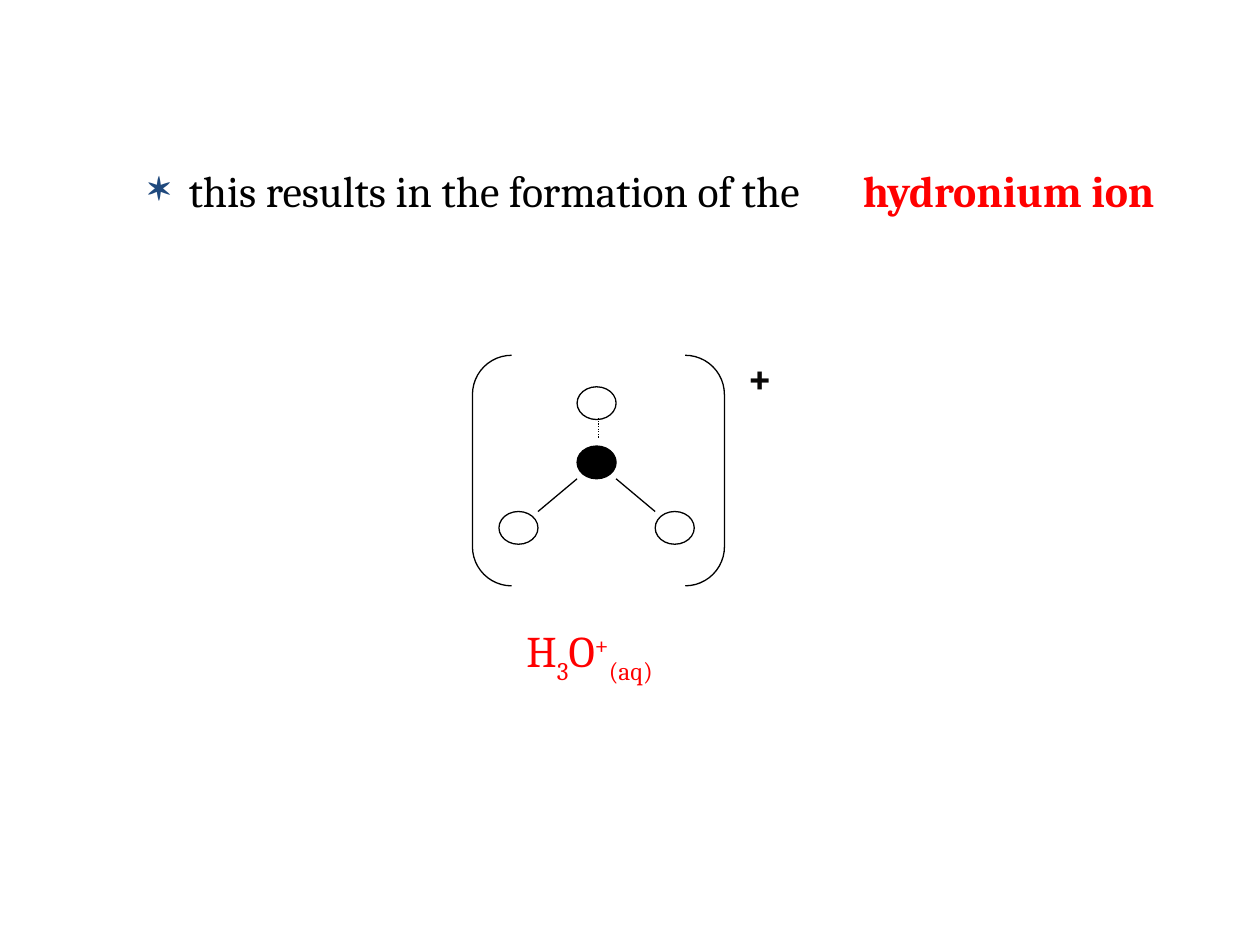
from pptx import Presentation
from pptx import util as u
from pptx.dml.color import RGBColor
from pptx.enum import dml, shapes, text
from pptx.oxml.ns import qn
from lxml import etree

COLORS = {"black": "000000", "white": "FFFFFF", "red": "FF0000",
          "plus": "090807", "bullet": "1F497D"}
FONT, SIZE = "Cambria", 25
ATOM_W, ATOM_H = 0.31, 0.26


def rgb(name):
    return RGBColor.from_string(COLORS[name])


def inches(*values):
    return [u.Inches(v) for v in values]


def add_text(s, box, runs, color, bold=False, hanging=False, bullet=None):
    """Place one line of (text, baseline percent) runs in box."""
    tf = s.shapes.add_textbox(*inches(*box)).text_frame
    tf.word_wrap = True
    tf.auto_size = text.MSO_AUTO_SIZE.SHAPE_TO_FIT_TEXT
    p = tf.paragraphs[0]
    pPr = p._p.get_or_add_pPr()
    if hanging:
        pPr.set("marL", str(u.Inches(0.32)))
        pPr.set("indent", str(-u.Inches(0.32)))
    if bullet:
        clr = etree.SubElement(pPr, qn("a:buClr"))
        etree.SubElement(clr, qn("a:srgbClr"), val=COLORS["bullet"])
        etree.SubElement(pPr, qn("a:buChar"), char=bullet)
    for words, base in runs:
        r = p.add_run()
        r.text = words
        for key, value in {"name": FONT, "size": u.Pt(SIZE), "bold": bold}.items():
            setattr(r.font, key, value)
        r.font.color.rgb = rgb(color)
        if base:
            r.font._element.set("baseline", str(base * 1000))


def set_line(sp):
    sp.line.color.rgb = rgb("black")
    sp.line.width = u.Pt(0.75)


def add_atom(s, x, y, fill):
    sp = s.shapes.add_shape(shapes.MSO_SHAPE.OVAL, *inches(x, y, ATOM_W, ATOM_H))
    sp.shadow.inherit = False
    sp.fill.solid()
    sp.fill.fore_color.rgb = rgb(fill)
    set_line(sp)


def add_bond(s, x1, y1, x2, y2, dotted=False):
    c = s.shapes.add_connector(shapes.MSO_CONNECTOR.STRAIGHT, *inches(x1, y1, x2, y2))
    set_line(c)
    if dotted:
        c.line.dash_style = dml.MSO_LINE.ROUND_DOT
    etree.SubElement(c._element.spPr, qn("a:effectLst"))


def statement(s, x, y):
    add_text(s, (x, y, 8.5, 0.52), [("this results in the formation of the", 0)],
             "black", hanging=True, bullet="✶")
    add_text(s, (x + 5.67, y, 3, 0.52), [("hydronium ion", 0)], "red", bold=True)


def ion_diagram(s, x, y, w, h):
    # Oxygen in the middle, hydrogens above and to both sides
    ox, oy = x + 0.83, y + 0.72
    dx, dy = 2 * ATOM_W, 2 * ATOM_H
    add_atom(s, ox, oy, "black")
    for hx, hy in ((ox - dx, oy + dy), (ox + dx, oy + dy), (ox, oy - 0.47)):
        add_atom(s, hx, hy, "white")

    # Bonds between facing corners, dotted for the new one
    for corner, step in ((ox, -ATOM_W), (ox + ATOM_W, ATOM_W)):
        add_bond(s, corner, oy + ATOM_H, corner + step, oy + dy)
    add_bond(s, x + 1, y + 0.5, x + 1, y + 0.66, dotted=True)

    # Brackets and charge
    sp = s.shapes.add_shape(shapes.MSO_SHAPE.DOUBLE_BRACKET, *inches(x, y, w, h))
    sp.shadow.inherit = False
    sp.adjustments[0] = 0.17
    sp.fill.background()
    set_line(sp)
    add_text(s, (x + w + 0.08, y - 0.09, 0.92, 0.52), [("+", 0)], "plus", bold=True)


def formula(s, x, y):
    runs = [("H", 0), ("3", -30), ("O", 0), ("+", 30), ("(aq)", -30)]
    add_text(s, (x, y, 3, 0.52), runs, "red", hanging=True)


def main():
    prs = Presentation()
    prs.slide_width, prs.slide_height = inches(10, 7.5)
    s = prs.slides.add_slide(prs.slide_layouts[6])
    statement(s, 1.08, 1.25)
    ion_diagram(s, 3.75, 2.82, 2, 1.83)
    formula(s, 4.08, 4.9)
    prs.save("out.pptx")


if __name__ == "__main__":
    main()
